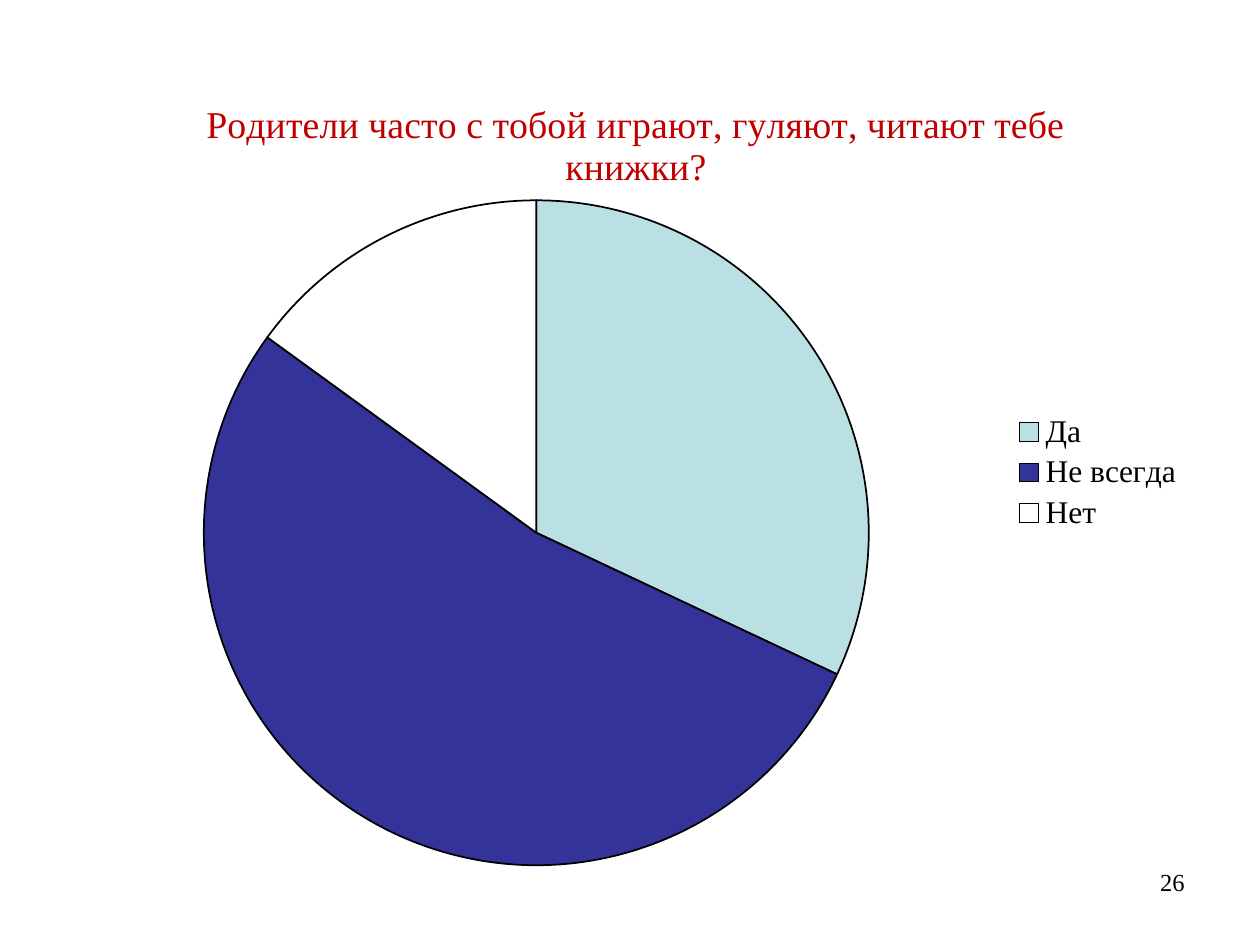
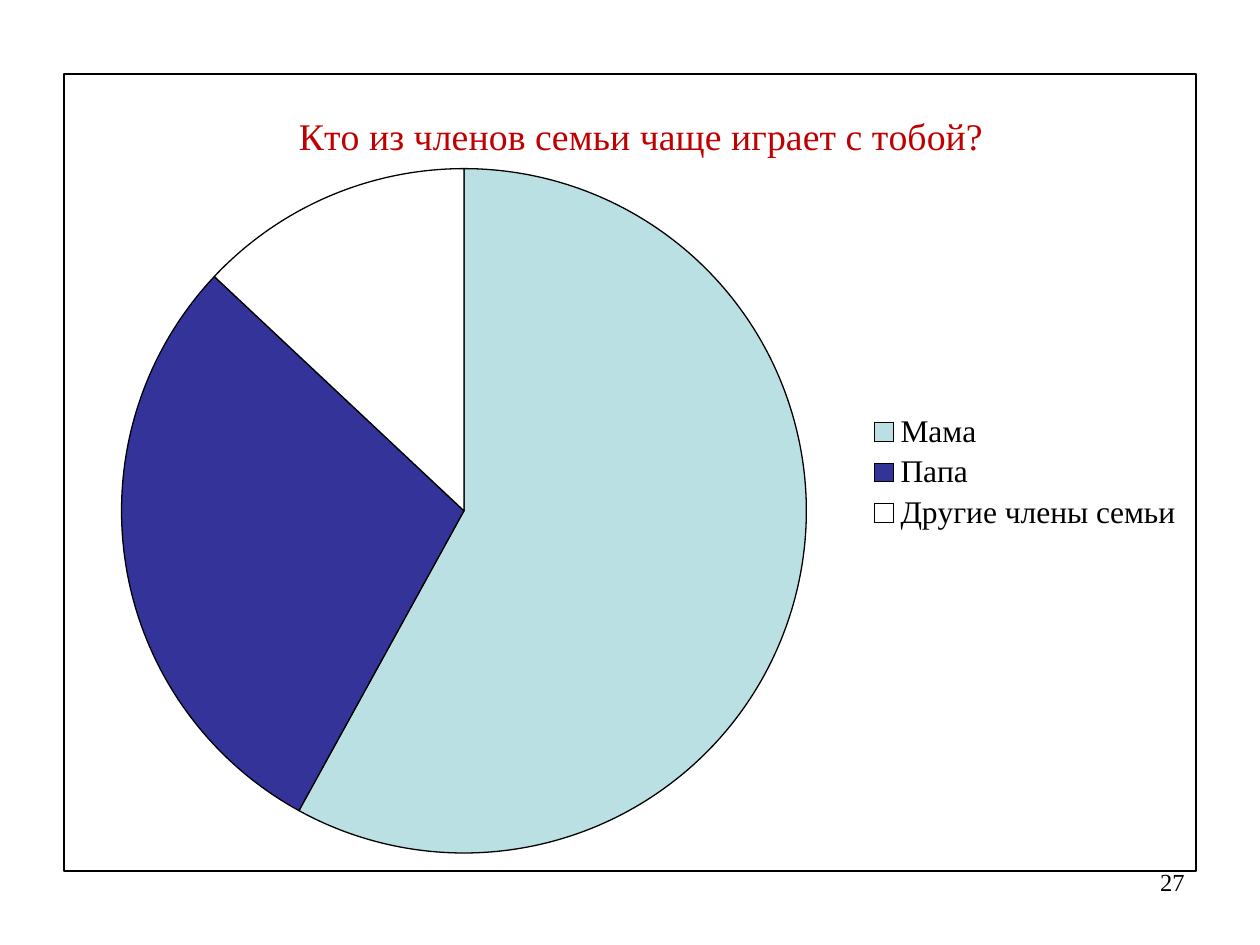
from pptx import Presentation
from pptx.chart.data import CategoryChartData
from pptx.dml.color import RGBColor
from pptx.enum.chart import XL_CHART_TYPE, XL_LEGEND_POSITION
from pptx.enum.text import PP_ALIGN
from pptx.oxml import parse_xml
from pptx.oxml.ns import nsdecls, qn
from pptx.util import Pt

PIE = XL_CHART_TYPE.PIE
LEGEND_RIGHT = XL_LEGEND_POSITION.RIGHT
ALIGN_RIGHT = PP_ALIGN.RIGHT

FONT = "Times New Roman"
COLORS = {
    "text": "000000",
    "title": "C00000",
    "outline": "000000",
    "first": "BBE0E3",
    "second": "333399",
    "third": "FFFFFF",
}
SLICES = ("first", "second", "third")


def color(name):
    return RGBColor.from_string(COLORS[name])


class SurveyDeck:
    def __init__(self):
        self.presentation = Presentation()
        self.presentation.slide_width = Pt(720)
        self.presentation.slide_height = Pt(540)
        self.slide = None

    def add_slide(self):
        layout = self.presentation.slide_layouts[6]
        self.slide = self.presentation.slides.add_slide(layout)

    def style_font(self, font, size, color_name="text"):
        font.name = FONT
        font.size = Pt(size)
        font.bold = False
        font.color.rgb = color(color_name)

    def place(self, element, position, frame, size=None):
        left, top, width, height = frame
        values = {"x": (position[0] - left) / width, "y": (position[1] - top) / height}
        target = ""
        if size:
            target = '<c:layoutTarget val="inner"/>'
            values.update(w=size / width, h=size / height)
        modes = "".join(f'<c:{key}Mode val="edge"/>' for key in "xy")
        numbers = "".join(f'<c:{key} val="{value:.4f}"/>' for key, value in values.items())
        layout = parse_xml(
            f'<c:layout {nsdecls("c")}><c:manualLayout>{target}{modes}{numbers}'
            "</c:manualLayout></c:layout>"
        )
        present = element.find(qn("c:layout"))
        if present is None:
            element.insert(0, layout)
        else:
            element.replace(present, layout)

    def frame_chart(self, chart, border):
        line = "<a:ln><a:noFill/></a:ln>"
        if border:
            line = (
                f'<a:ln w="{Pt(border)}"><a:solidFill>'
                f'<a:srgbClr val="{COLORS["outline"]}"/></a:solidFill></a:ln>'
            )
        properties = parse_xml(f'<c:spPr {nsdecls("c", "a")}><a:noFill/>{line}</c:spPr>')
        chart.element.find(qn("c:chart")).addnext(properties)

    def add_pie(self, title, answers, frame, title_at, pie_at, pie_size, outline, border=0):
        data = CategoryChartData()
        data.categories = list(answers)
        data.add_series("Series 1", list(answers.values()))
        chart = self.slide.shapes.add_chart(PIE, *map(Pt, frame), data).chart
        self.style_font(chart.font, 18)
        self.frame_chart(chart, border)

        chart.has_title = True
        run = chart.chart_title.text_frame.paragraphs[0].add_run()
        run.text = title
        self.style_font(run.font, 21.6, "title")
        chart.chart_title.include_in_layout = False
        self.place(chart.chart_title.element if hasattr(chart.chart_title, "element")
                   else chart.element.find(".//" + qn("c:title")), title_at, frame)

        chart.has_legend = True
        chart.legend.position = LEGEND_RIGHT
        chart.legend.include_in_layout = False
        self.style_font(chart.legend.font, 18)

        self.place(chart.element.find(".//" + qn("c:plotArea")), pie_at, frame, pie_size)
        plot = chart.plots[0]
        plot.vary_by_categories = True
        for index, name in enumerate(SLICES):
            slice_format = plot.series[0].points[index].format
            slice_format.fill.solid()
            slice_format.fill.fore_color.rgb = color(name)
            slice_format.line.color.rgb = color("outline")
            slice_format.line.width = Pt(outline)

    def add_page_number(self, number):
        box = self.slide.shapes.add_textbox(Pt(516), Pt(492), Pt(168), Pt(37.5))
        box.text_frame.word_wrap = True
        paragraph = box.text_frame.paragraphs[0]
        paragraph.alignment = ALIGN_RIGHT
        run = paragraph.add_run()
        run.text = str(number)
        self.style_font(run.font, 14)


def main():
    deck = SurveyDeck()

    deck.add_slide()
    deck.add_pie(
        "Родители часто с тобой играют, гуляют, читают тебе книжки?",
        {"Да": 32, "Не всегда": 53, "Нет": 15},
        frame=(36, 36, 648, 468),
        title_at=(114, 53),
        pie_at=(116.5, 114.5),
        pie_size=380,
        outline=1,
    )
    deck.add_page_number(26)

    deck.add_slide()
    deck.add_pie(
        "Кто из членов семьи чаще играет с тобой?",
        {"Мама": 58, "Папа": 29, "Другие члены семьи": 13},
        frame=(36, 42, 648, 456),
        title_at=(166.5, 59.5),
        pie_at=(69, 96),
        pie_size=392,
        outline=0.75,
        border=1,
    )
    deck.add_page_number(27)

    deck.presentation.save("out.pptx")


if __name__ == "__main__":
    main()
